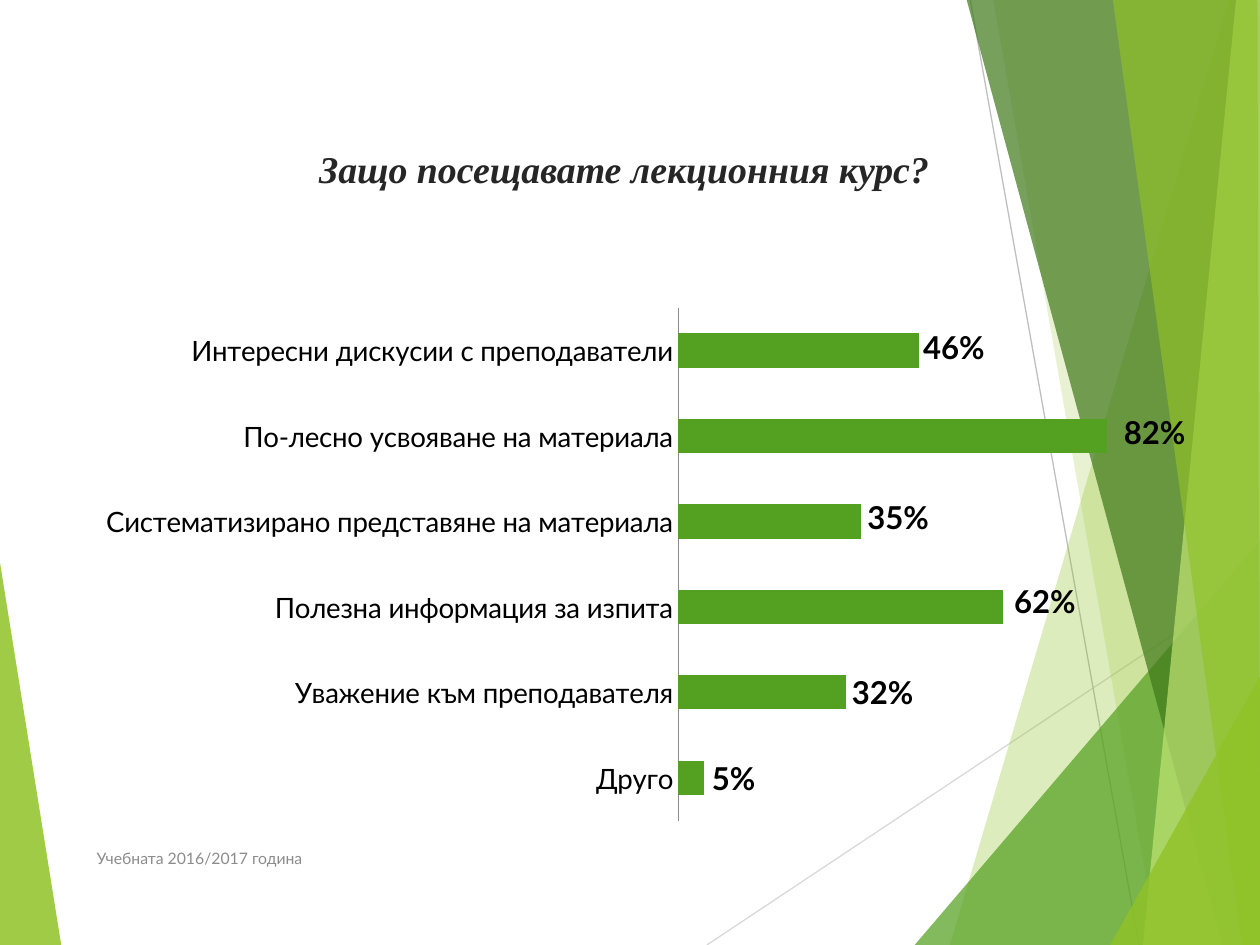
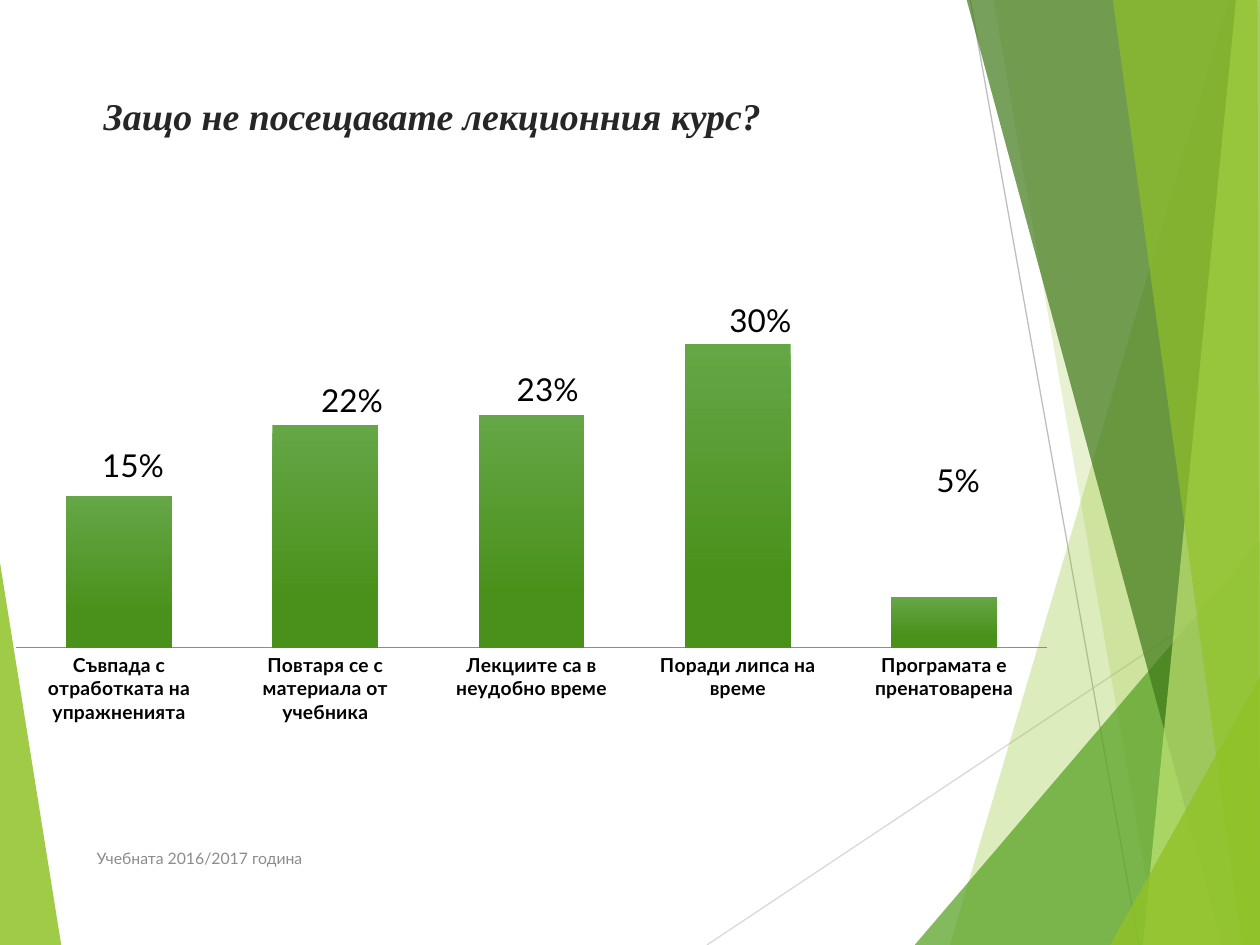
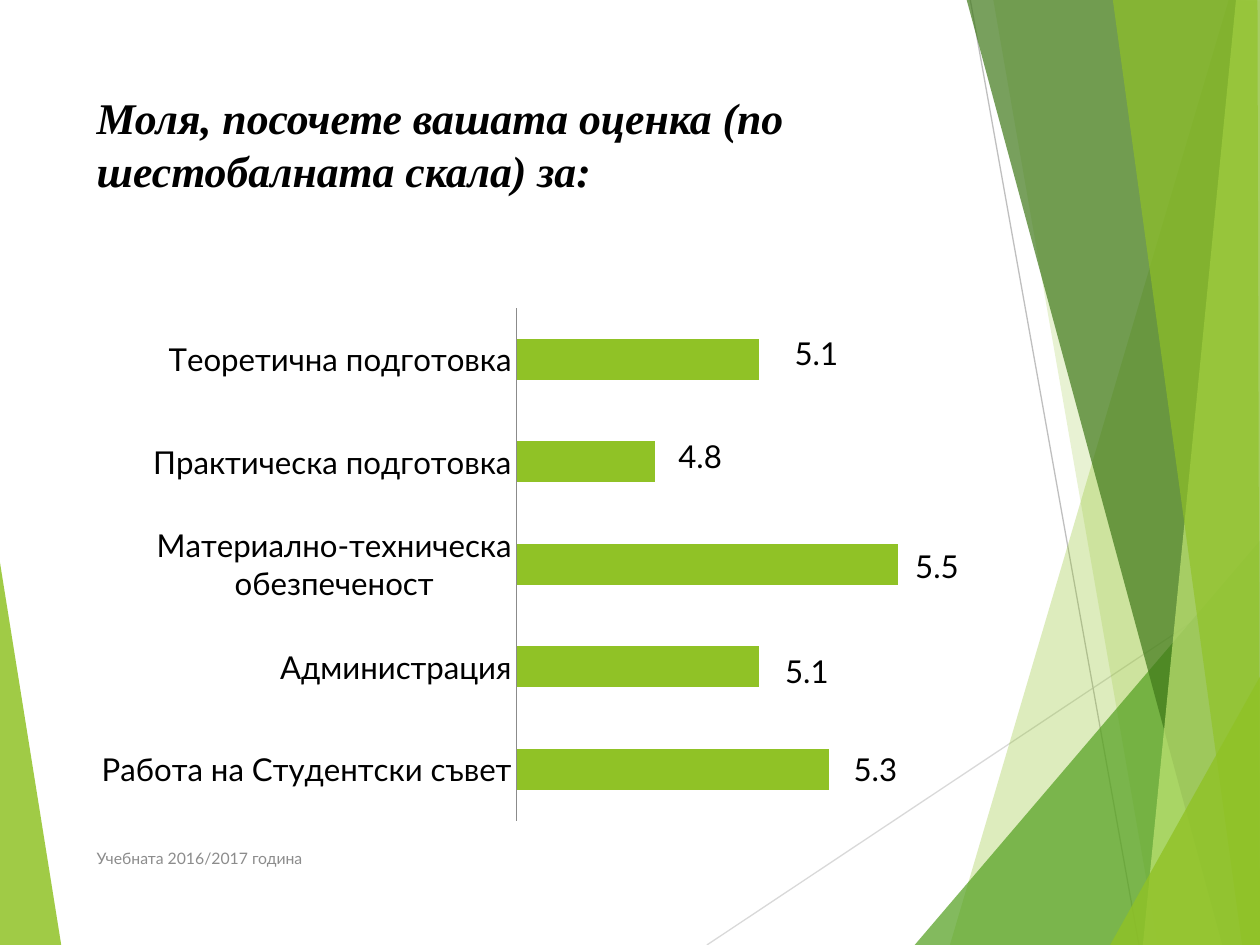
import dataclasses

import pptx
import pptx.chart.chart
import pptx.chart.data
import pptx.dml.color
import pptx.enum.chart
import pptx.enum.shapes
import pptx.enum.text
import pptx.oxml
import pptx.oxml.ns
import pptx.presentation
import pptx.slide
import pptx.text.text
import pptx.util

Cm = pptx.util.Cm
Pt = pptx.util.Pt
RGBColor = pptx.dml.color.RGBColor
ChartType = pptx.enum.chart.XL_CHART_TYPE
LabelPosition = pptx.enum.chart.XL_LABEL_POSITION
Align = pptx.enum.text.PP_ALIGN
Anchor = pptx.enum.text.MSO_ANCHOR

LIME = RGBColor(0x90, 0xC2, 0x26)
PALE_LIME = RGBColor(0xC0, 0xE4, 0x74)
GREEN = RGBColor(0x54, 0xA0, 0x21)
DARK_GREEN = RGBColor(0x3F, 0x78, 0x19)
GRADIENT_TOP = RGBColor(0x65, 0xA6, 0x46)
GRADIENT_BOTTOM = RGBColor(0x4A, 0x91, 0x1B)
BLACK = RGBColor(0, 0, 0)
CHARCOAL = RGBColor(0x26, 0x26, 0x26)
AXIS_GREY = RGBColor(0x8B, 0x8B, 0x8B)
FOOTER_GREY = RGBColor(0x8C, 0x8C, 0x8C)
LINE_GREY = RGBColor(0xBF, 0xBF, 0xBF)
LIGHT_GREY = RGBColor(0xD9, 0xD9, 0xD9)

TITLE_FONT = "Times New Roman"
BODY_FONT = "Lato"
FOOTER = "Учебната 2016/2017 година"

WIDTH, HEIGHT = 25.4, 19.05
RIGHT, TOP = 25.43, -0.03  # the facets bleed slightly over the slide edge


@dataclasses.dataclass(frozen=True)
class Box:
    """A frame in centimetres."""
    left: float
    top: float
    width: float
    height: float

    def lengths(self) -> tuple[Cm, ...]:
        return tuple(Cm(value) for value in dataclasses.astuple(self))


@dataclasses.dataclass(frozen=True)
class Facet:
    """A translucent polygon; corners in centimetres, opacity in percent."""
    color: RGBColor
    opacity: int
    corners: tuple[tuple[float, float], ...]


@dataclasses.dataclass(frozen=True)
class Ray:
    color: RGBColor
    start: tuple[float, float]
    end: tuple[float, float]


@dataclasses.dataclass(frozen=True)
class Answer:
    """One bar, with the shift of its label in percent of the chart size."""
    name: str
    value: float
    label_shift: tuple[float, float]


@dataclasses.dataclass(frozen=True)
class Survey:
    title: str
    title_box: Box
    chart_box: Box
    chart_type: ChartType
    answers: tuple[Answer, ...]
    axis_range: tuple[float, float]
    bar_colors: tuple[RGBColor, ...]
    label_position: LabelPosition
    title_size: float = 21.6
    title_color: RGBColor = CHARCOAL
    title_align: Align = Align.LEFT
    title_inset: tuple[float, float] = (0.25, 0.13)
    category_size: int = 18
    category_bold: bool = False
    label_bold: bool = False
    number_format: str = "0%"
    gap: int = 150
    overlap: int = 0
    plot: tuple[float, ...] = ()


LEFT_FACET = Facet(LIME, 85, ((TOP, 11.15), (1.24, 19.08), (TOP, HEIGHT)))
RAYS = (
    Ray(LIGHT_GREY, (14.25, HEIGHT), (RIGHT, 11.61)),
    Ray(LINE_GREY, (19.56, 0), (22.96, HEIGHT)),
)
RIGHT_FACETS = (
    Facet(LIME, 30, ((24.77, 0), (19.15, HEIGHT), (25.45, 19.08), (RIGHT, 0.03))),
    Facet(LIME, 20, ((20.02, TOP), (23.34, HEIGHT), (RIGHT, HEIGHT), (RIGHT, TOP))),
    Facet(GREEN, 72, ((18.44, HEIGHT), (WIDTH, 10.9), (RIGHT, HEIGHT))),
    Facet(DARK_GREEN, 70, ((19.48, TOP), (24.64, HEIGHT), (RIGHT, HEIGHT), (RIGHT, TOP))),
    Facet(PALE_LIME, 70, ((24.92, TOP), (23.04, HEIGHT), (RIGHT, HEIGHT), (WIDTH, TOP))),
    Facet(LIME, 65, ((22.43, TOP), (25.04, HEIGHT), (WIDTH, HEIGHT), (25.35, TOP))),
    Facet(LIME, 80, ((22.38, HEIGHT), (RIGHT, 13.59), (RIGHT, HEIGHT))),
)
FOOTER_BOX = Box(1.7, 16.79, 12.85, 1.02)

SURVEYS = (
    Survey(
        title="Защо посещавате лекционния курс?",
        title_box=Box(1.27, 1.93, 22.63, 2.01),
        title_align=Align.CENTER,
        title_inset=(0.25, 1.0),
        chart_box=Box(1.7, 5.99, 22.2, 10.77),
        chart_type=ChartType.BAR_STACKED,
        answers=(
            Answer("Друго", 0.05, (3.9, 0)),
            Answer("Уважение към преподавателя", 0.32, (11.1, 0)),
            Answer("Полезна информация за изпита", 0.62, (18.8, -1.1)),
            Answer("Систематизирано представяне на материала", 0.35, (11.8, -0.9)),
            Answer("По-лесно усвояване на материала", 0.82, (24.1, -0.7)),
            Answer("Интересни дискусии с преподаватели", 0.46, (14.3, -0.6)),
        ),
        axis_range=(0, 0.9),
        bar_colors=(GREEN,),
        label_position=LabelPosition.CENTER,
        category_size=16,
        label_bold=True,
        overlap=100,
    ),
    Survey(
        title="Защо не посещавате лекционния курс?",
        title_box=Box(1.27, 1.73, 22.63, 2.21),
        title_inset=(0.82, 0.13),
        chart_box=Box(0.3, 5.74, 21.59, 11.05),
        chart_type=ChartType.COLUMN_STACKED,
        answers=(
            Answer("Съвпада с отработката на упражненията", 0.15, (1.3, -19.4)),
            Answer("Повтаря се с материала от учебника", 0.22, (2.5, -24.8)),
            Answer("Лекциите са в неудобно време", 0.23, (1.5, -25.9)),
            Answer("Поради липса на време", 0.3, (2.1, -32)),
            Answer("Програмата е пренатоварена", 0.05, (1.3, -25.9)),
        ),
        axis_range=(0, 0.35),
        bar_colors=(GRADIENT_TOP, GRADIENT_BOTTOM),
        label_position=LabelPosition.CENTER,
        category_size=11,
        category_bold=True,
        gap=95,
        overlap=100,
        plot=(0.1, 1.6, 96.3, 64.6),
    ),
    Survey(
        title="Моля, посочете вашата оценка (по шестобалната скала) за:",
        title_box=Box(1.7, 1.7, 17.63, 3.66),
        title_size=25,
        title_color=BLACK,
        chart_box=Box(1.7, 5.99, 17.63, 10.77),
        chart_type=ChartType.BAR_CLUSTERED,
        answers=(
            Answer("Работа на Студентски съвет", 5.3, (2.3, 0)),
            Answer("Администрация", 5.1, (2.4, 0.7)),
            Answer("Материално-техническа обезпеченост", 5.5, (1.4, 0.4)),
            Answer("Практическа подготовка", 4.8, (2.1, -1.1)),
            Answer("Теоретична подготовка", 5.1, (3.5, -1.1)),
        ),
        axis_range=(4.4, 5.6),
        bar_colors=(LIME,),
        label_position=LabelPosition.OUTSIDE_END,
        number_format="0.0",
    ),
)


def format_font(font: pptx.text.text.Font, *, size: float, color: RGBColor = BLACK,
                name: str = BODY_FONT, bold: bool = False, italic: bool = False) -> None:
    font.name, font.size = name, Pt(size)
    font.bold, font.italic = bold, italic
    font.color.rgb = color


def write_text(frame: pptx.text.text.TextFrame, text: str, *, align: Align = Align.LEFT,
               anchor: Anchor = Anchor.TOP, inset: tuple[float, float] = (0.25, 0.13),
               **font_format) -> None:
    frame.word_wrap = True
    frame.auto_size = pptx.enum.text.MSO_AUTO_SIZE.NONE
    frame.vertical_anchor = anchor
    frame.margin_left, frame.margin_top = (Cm(value) for value in inset)
    paragraph = frame.paragraphs[0]
    paragraph.alignment = align
    run = paragraph.add_run()
    run.text = text
    format_font(run.font, **font_format)


def chart_xml(markup: str):
    """Parse one chart element, given as '<c:tag ...' with the namespace left out."""
    tag, rest = markup.split(" ", 1)
    return pptx.oxml.parse_xml(f"{tag} {pptx.oxml.ns.nsdecls('c')} {rest}")


def draw_facet(slide: pptx.slide.Slide, facet: Facet):
    first, *others = [(Cm(x), Cm(y)) for x, y in facet.corners]
    builder = slide.shapes.build_freeform(*first)
    builder.add_line_segments(others, close=True)
    shape = builder.convert_to_shape()
    shape.shadow.inherit = False
    shape.line.fill.background()
    shape.fill.solid()
    shape.fill.fore_color.rgb = facet.color
    color = shape.element.xpath("./p:spPr/a:solidFill/a:srgbClr")[0]
    color.append(pptx.oxml.parse_xml(
        f'<a:alpha {pptx.oxml.ns.nsdecls("a")} val="{facet.opacity * 1000}"/>'))
    return shape


def draw_ray(slide: pptx.slide.Slide, ray: Ray):
    line = slide.shapes.add_connector(
        pptx.enum.shapes.MSO_CONNECTOR.STRAIGHT,
        *(Cm(value) for value in ray.start + ray.end))
    line.line.color.rgb = ray.color
    line.line.width = Pt(0.75)
    line.element.spPr.append(
        pptx.oxml.parse_xml(f'<a:effectLst {pptx.oxml.ns.nsdecls("a")}/>'))
    return line


def move_backdrop_to_layout(slide: pptx.slide.Slide) -> None:
    """Draw the backdrop on the slide, then hand it to the layout that all slides share."""
    layout = slide.slide_layout
    for placeholder in list(layout.placeholders):
        if placeholder.placeholder_format.type != pptx.enum.shapes.PP_PLACEHOLDER.TITLE:
            layout.shapes.element.remove(placeholder.element)
    backdrop = [draw_facet(slide, LEFT_FACET)]
    backdrop += [draw_ray(slide, ray) for ray in RAYS]
    backdrop += [draw_facet(slide, facet) for facet in RIGHT_FACETS]
    for shape in backdrop:
        layout.shapes.element.append(shape.element)


def format_axes(chart: pptx.chart.chart.Chart, survey: Survey) -> None:
    values = chart.value_axis
    values.minimum_scale, values.maximum_scale = survey.axis_range
    values.has_major_gridlines = False
    values.visible = False
    categories = chart.category_axis
    categories.major_tick_mark = pptx.enum.chart.XL_TICK_MARK.NONE
    categories.format.line.color.rgb = AXIS_GREY
    categories.format.line.width = Pt(0.75)
    format_font(categories.tick_labels.font, size=survey.category_size,
                bold=survey.category_bold)


def fill_bars(series, colors: tuple[RGBColor, ...]) -> None:
    fill = series.format.fill
    if len(colors) == 1:
        fill.solid()
        fill.fore_color.rgb = colors[0]
        return
    fill.gradient()
    fill.gradient_angle = 270
    for stop, color, position in zip(fill.gradient_stops, colors, (0, 0.78)):
        stop.color.rgb = color
        stop.position = position


def hide_leader_lines(chart: pptx.chart.chart.Chart) -> None:
    for labels in chart.element.xpath(".//c:ser/c:dLbls"):
        for leader_lines in labels.xpath("./c:showLeaderLines"):
            labels.remove(leader_lines)
        labels.xpath("./c:showBubbleSize")[0].addnext(
            chart_xml('<c:showLeaderLines val="0"/>'))


def label_bars(chart: pptx.chart.chart.Chart, survey: Survey) -> None:
    series = chart.plots[0].series[0]
    labels = series.data_labels
    labels.show_value = True
    labels.number_format = survey.number_format
    labels.number_format_is_linked = False
    format_font(labels.font, size=18, bold=survey.label_bold)
    for index in range(len(survey.answers)):
        label = series.points[index].data_label
        label.position = survey.label_position
        format_font(label.font, size=18, bold=survey.label_bold)
    for element, answer in zip(chart.element.xpath(".//c:dLbl"), survey.answers):
        x, y = (shift / 100 for shift in answer.label_shift)
        element.insert(1, chart_xml(
            f'<c:layout ><c:manualLayout><c:x val="{x:.3f}"/><c:y val="{y:.3f}"/>'
            '</c:manualLayout></c:layout>'))
        element.insert(2, chart_xml(
            f'<c:numFmt formatCode="{survey.number_format}" sourceLinked="0"/>'))
    hide_leader_lines(chart)


def place_plot(chart: pptx.chart.chart.Chart, percents: tuple[float, ...]) -> None:
    area = chart.element.xpath(".//c:plotArea")[0]
    for automatic in area.xpath("./c:layout"):
        area.remove(automatic)
    sizes = "".join(f'<c:{side} val="{percent / 100:.3f}"/>'
                    for side, percent in zip("xywh", percents))
    area.insert(0, chart_xml(
        '<c:layout ><c:manualLayout><c:layoutTarget val="inner"/>'
        f'<c:xMode val="edge"/><c:yMode val="edge"/>{sizes}</c:manualLayout></c:layout>'))


def draw_chart(slide: pptx.slide.Slide, survey: Survey) -> None:
    data = pptx.chart.data.CategoryChartData(number_format=survey.number_format)
    data.categories = [answer.name for answer in survey.answers]
    data.add_series("Series 1", [answer.value for answer in survey.answers])
    chart = slide.shapes.add_chart(
        survey.chart_type, *survey.chart_box.lengths(), data).chart
    chart.has_legend = False
    chart.has_title = False
    format_font(chart.font, size=18)
    plot = chart.plots[0]
    plot.vary_by_categories = False
    plot.gap_width, plot.overlap = survey.gap, survey.overlap
    format_axes(chart, survey)
    fill_bars(plot.series[0], survey.bar_colors)
    label_bars(chart, survey)
    if survey.plot:
        place_plot(chart, survey.plot)


def fill_slide(slide: pptx.slide.Slide, survey: Survey) -> None:
    title = slide.shapes.title
    title.left, title.top, title.width, title.height = survey.title_box.lengths()
    write_text(title.text_frame, survey.title, align=survey.title_align,
               inset=survey.title_inset, name=TITLE_FONT, size=survey.title_size,
               color=survey.title_color, bold=True, italic=True)
    draw_chart(slide, survey)
    footer = slide.shapes.add_textbox(*FOOTER_BOX.lengths())
    write_text(footer.text_frame, FOOTER, anchor=Anchor.MIDDLE, size=9, color=FOOTER_GREY)


def main() -> None:
    deck = pptx.Presentation()
    deck.slide_width, deck.slide_height = Cm(WIDTH), Cm(HEIGHT)
    title_only = deck.slide_layouts[5]
    slides = [deck.slides.add_slide(title_only) for _ in SURVEYS]
    move_backdrop_to_layout(slides[0])
    for slide, survey in zip(slides, SURVEYS):
        fill_slide(slide, survey)
    deck.save("out.pptx")


if __name__ == "__main__":
    main()
